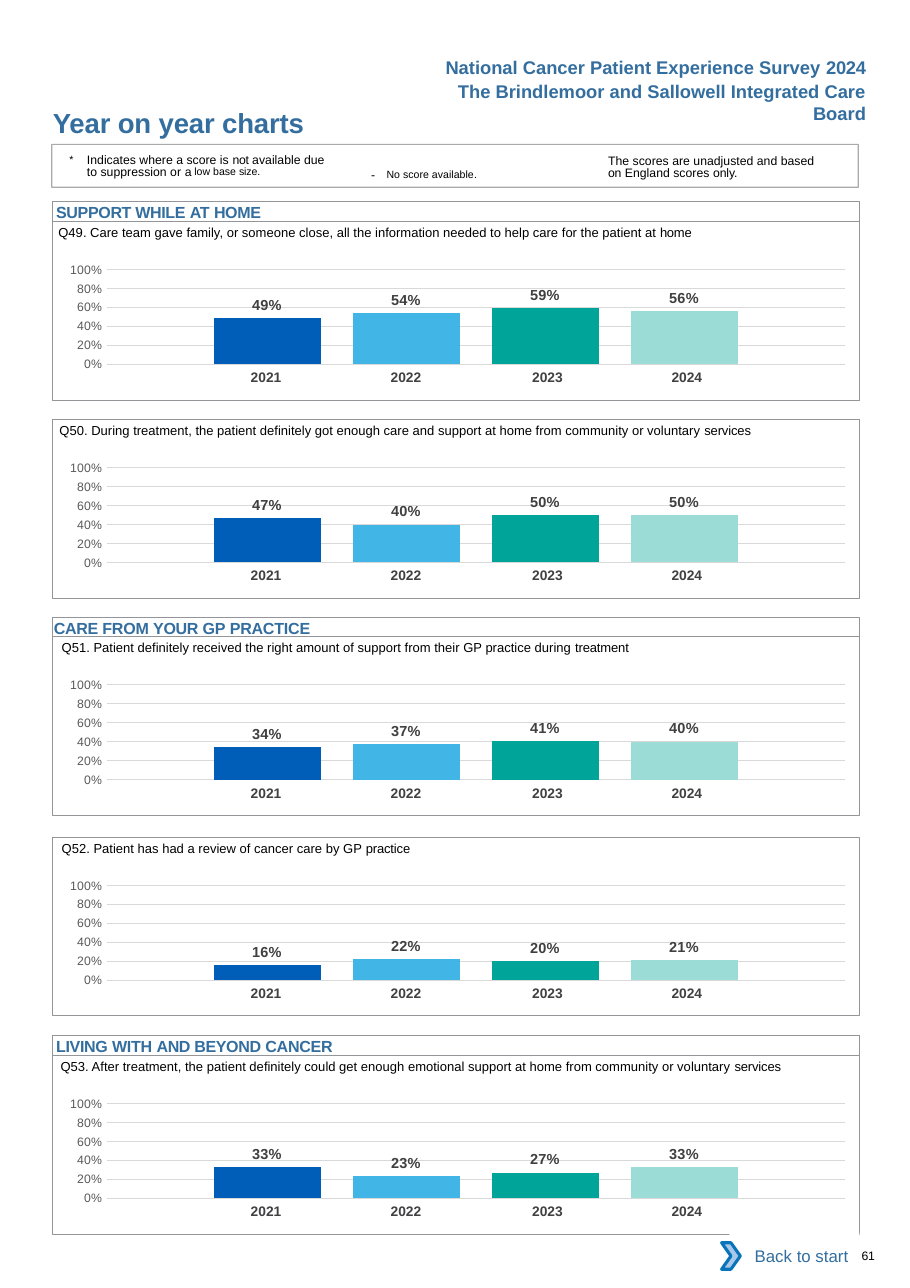
from dataclasses import dataclass
from typing import NamedTuple

from lxml import etree
from pptx import Presentation
from pptx import util as u
from pptx.chart import data as cd
from pptx.dml import color as dml
from pptx.enum import chart as ec, shapes, text
from pptx.oxml import ns

PX = 9144  # 100 px to the inch
COLORS = {
    "heading": "336E9F", "body": "000000", "frame": "939598", "year": "414042",
    "axis": "595959", "grid": "D9D9D9", "label": "404040", "white": "FFFFFF",
    "arrow": "A8C7E9", "arrow_line": "0A74BB",
}
YEAR_COLORS = {"2021": "005EB8", "2022": "41B6E6", "2023": "00A499", "2024": "9CDCD7"}
YEAR_WIDTHS = (127, 127, 134, 127)
YEAR_RIGHT_MARGINS = (0, 0, 4, 12)
PLOT_AREA = {"x": 0.079, "y": 0.145, "w": 0.915, "h": 0.666}
NO_GRID_STYLE = "{2D5ABB26-0587-4C30-8999-92F81FD0307C}"
FRAME_X, FRAME_W, FRAME_H = 48, 732, 162


class Box(NamedTuple):
    x: int
    y: int
    w: int
    h: int


class Run(NamedTuple):
    text: str
    spacing: float = 0
    size: float | None = None
    baseline: int = 0


@dataclass(frozen=True)
class Style:
    size: float
    color: str = "body"
    bold: bool = False
    align: text.PP_ALIGN = text.PP_ALIGN.LEFT
    anchor: text.MSO_ANCHOR = text.MSO_ANCHOR.TOP
    insets: tuple[int, int, int, int] = (0, 0, 0, 0)
    before: float = 0
    line: float | None = None
    left: int = 0
    hanging: int = 0
    wrap: bool = True


@dataclass(frozen=True)
class Panel:
    y: int
    question_x: int
    question: list[Run]
    values: tuple[float, ...]
    heading: tuple[Run, ...] = ()
    heading_indent: int = 3


USUAL = (10, 5, 10, 5)
TITLE = Style(18, "heading", True, before=4.1, left=1)
BANNER = Style(12, "heading", True, text.PP_ALIGN.RIGHT, insets=USUAL, wrap=False)
QUESTION = Style(8.5, anchor=text.MSO_ANCHOR.MIDDLE, insets=(0, 9, 0, 0), before=6.8, left=1)
NOTE = Style(8, insets=(0, 3, 0, 0), before=2.5, line=8.1)
HANGING_NOTE = Style(8, insets=(0, 3, 0, 0), before=2.5, line=8.1, left=16, hanging=16)
DASH_NOTE = Style(8, insets=USUAL, before=2.1)
PAGE_NUMBER = Style(8, before=0.2, left=10)
BACK = Style(11, "heading", align=text.PP_ALIGN.RIGHT, anchor=text.MSO_ANCHOR.MIDDLE, insets=USUAL)

PANELS = [
    Panel(201, 52, [Run("Q49. Care team gave family, or someone close, all the information needed to help care for the patient at"),
                    Run(" home", -0.2)], (0.49, 0.54, 0.59, 0.56),
          (Run("SUPPORT WHILE ", -0.2), Run("AT ", -0.1), Run("HOME", -0.2))),
    Panel(381, 53, [Run("Q50. During treatment, the patient definitely got enough care and support at home from community or voluntary "),
                    Run("services", -0.1)], (0.47, 0.40, 0.50, 0.50)),
    Panel(578, 55, [Run("Q51. Patient definitely received the right amount of support from their GP practice during "),
                    Run("treatment", -0.1)], (0.34, 0.37, 0.41, 0.40),
          (Run("CARE ", -0.2), Run("FROM ", -0.1), Run("YOUR ", -0.2), Run("GP "), Run("PRACTICE", -0.1)), 1),
    Panel(760, 55, [Run("Q52. Patient has had a review of cancer care by GP "),
                    Run("practice", -0.1)], (0.16, 0.22, 0.20, 0.21)),
    Panel(958, 54, [Run("Q53. After treatment, the patient definitely could get enough emotional support at home from community or voluntary "),
                    Run("services", -0.1)], (0.33, 0.23, 0.27, 0.33),
          (Run("LIVING ", -0.2), Run("WITH ", -0.1), Run("AND BEYOND ", -0.2), Run("CANCER", -0.1))),
]


def emu(box: Box) -> list[int]:
    return [v * PX for v in box]


def rgb(name: str) -> dml.RGBColor:
    return dml.RGBColor.from_string(COLORS.get(name, name))


def set_font(font, size: float, color: str, bold: bool = False) -> None:
    font.name, font.size, font.bold = "Arial", u.Pt(size), bold
    font.color.rgb = rgb(color)


def write(tf, runs, style: Style) -> None:
    tf.word_wrap = style.wrap
    tf.vertical_anchor = style.anchor
    tf.margin_left, tf.margin_top, tf.margin_right, tf.margin_bottom = (v * PX for v in style.insets)
    p = tf.paragraphs[0]
    p.alignment = style.align
    p.space_before = u.Pt(style.before)
    if style.line:
        p.line_spacing = u.Pt(style.line)
    pr = p._p.get_or_add_pPr()
    pr.set("marL", str(style.left * PX))
    pr.set("indent", str(-style.hanging * PX))
    for item in runs:
        r = p.add_run()
        r.text = item.text
        set_font(r.font, item.size or style.size, style.color, style.bold)
        rpr = r._r.get_or_add_rPr()
        rpr.set("spc", str(round(item.spacing * 100)))
        if item.baseline:
            rpr.set("baseline", str(item.baseline * 1000))


def add_text(s, box: Box, runs, style: Style) -> None:
    write(s.shapes.add_textbox(*emu(box)).text_frame, runs, style)


def add_shape(s, box: Box, kind=shapes.MSO_SHAPE.RECTANGLE, fill: str = "", line: str = "", width: float = 0.5):
    sp = s.shapes.add_shape(kind, *emu(box))
    sp.shadow.inherit = False
    if fill:
        sp.fill.solid()
        sp.fill.fore_color.rgb = rgb(fill)
    else:
        sp.fill.background()
    if line:
        sp.line.color.rgb = rgb(line)
        sp.line.width = u.Pt(width)
    else:
        sp.line.fill.background()
    return sp


def add_year_chart(s, box: Box, values: tuple[float, ...]) -> None:
    data = cd.CategoryChartData(number_format="0%")
    data.categories = ["1"]
    for i, value in enumerate(values, 1):
        data.add_series(f"Series {i}", [value])
    chart = s.shapes.add_chart(ec.XL_CHART_TYPE.COLUMN_CLUSTERED, *emu(box), data).chart
    chart.has_legend = chart.has_title = False
    chart.font.name, chart.font.size = "Calibri", u.Pt(10)
    chart.font.color.rgb = rgb("body")
    chart.category_axis.visible = False
    axis = chart.value_axis
    axis.minimum_scale, axis.maximum_scale, axis.major_unit = 0, 1, 0.2
    axis.major_tick_mark = axis.minor_tick_mark = ec.XL_TICK_MARK.NONE
    axis.format.line.fill.background()
    axis.major_gridlines.format.line.color.rgb = rgb("grid")
    axis.major_gridlines.format.line.width = u.Pt(0.75)
    axis.tick_labels.number_format = "0%"
    axis.tick_labels.number_format_is_linked = False
    set_font(axis.tick_labels.font, 8, "axis")
    plot = chart.plots[0]
    plot.gap_width, plot.overlap, plot.vary_by_categories = 200, -30, False
    for series, color in zip(plot.series, YEAR_COLORS.values()):
        series.format.fill.solid()
        series.format.fill.fore_color.rgb = rgb(color)
        labels = series.data_labels
        labels.show_value = True
        labels.position = ec.XL_LABEL_POSITION.OUTSIDE_END
        labels.number_format, labels.number_format_is_linked = "0%", False
        set_font(labels.font, 9.5, "label", True)
    set_plot_area(chart)


def set_plot_area(chart) -> None:
    area = chart.element.find(".//" + ns.qn("c:plotArea"))
    for old in area.findall(ns.qn("c:layout")):
        area.remove(old)
    layout = etree.Element(ns.qn("c:layout"))
    manual = etree.SubElement(layout, ns.qn("c:manualLayout"))
    settings = {"layoutTarget": "inner", "xMode": "edge", "yMode": "edge", **PLOT_AREA}
    for tag, value in settings.items():
        etree.SubElement(manual, ns.qn(f"c:{tag}")).set("val", str(value))
    area.insert(0, layout)


def add_year_table(s, y: int) -> None:
    frame = s.shapes.add_table(1, len(YEAR_COLORS), *emu(Box(173, y, sum(YEAR_WIDTHS), 27)))
    frame.element.find(".//" + ns.qn("a:tableStyleId")).text = NO_GRID_STYLE
    table = frame.table
    table.first_row = table.horz_banding = False
    for i, (year, width, right) in enumerate(zip(YEAR_COLORS, YEAR_WIDTHS, YEAR_RIGHT_MARGINS)):
        table.columns[i].width = width * PX
        cell = table.cell(0, i)
        cell.fill.background()
        cell.margin_left, cell.margin_top, cell.margin_right, cell.margin_bottom = (
            v * PX for v in (10, 5, right, 5))
        p = cell.text_frame.paragraphs[0]
        p.alignment = text.PP_ALIGN.CENTER
        r = p.add_run()
        r.text = year
        set_font(r.font, 9, "year", True)


def add_panel(s, panel: Panel) -> None:
    if panel.heading:
        sp = add_shape(s, Box(FRAME_X, panel.y - 18, FRAME_W, 18), line="frame")
        style = Style(10.5, "heading", True, insets=(0, 1, 0, 0), before=0.5, left=panel.heading_indent)
        write(sp.text_frame, panel.heading, style)
    add_text(s, Box(panel.question_x, panel.y - 7, 721, 24), panel.question, QUESTION)
    add_year_table(s, panel.y + 130)
    add_year_chart(s, Box(39, panel.y + 25, FRAME_W, 129), panel.values)
    add_shape(s, Box(FRAME_X, panel.y, FRAME_W, FRAME_H), line="frame")


def add_notes_band(s) -> None:
    add_text(s, Box(552, 138, 201, 27), [
        Run("The scores are unadjusted and based"), Run(" on", -0.2),
        Run(" England scores "), Run("only.", -0.1)], NOTE)
    add_text(s, Box(327, 141, 183, 24), [
        Run("- ", 2.6), Run("No score available", 0, 12, 3), Run(".", -0.1, 12, 3)], DASH_NOTE)
    add_text(s, Box(63, 138, 237, 27), [
        Run("*\t", 0, 12, 3), Run("Indicates where a score is "), Run("not ", -0.2),
        Run("available due to suppression or "), Run("a ", -0.5),
        Run("low base", 0, 12, 7), Run(" size.", -0.1, 12, 7)], HANGING_NOTE)
    band = add_shape(s, Box(47, 131, FRAME_W, 39), line="frame", width=0.75)
    line_color = band.line._ln.find(".//" + ns.qn("a:srgbClr"))
    etree.SubElement(line_color, ns.qn("a:alpha")).set("val", "80000")


def main() -> None:
    prs = Presentation()
    prs.slide_width, prs.slide_height = 826 * PX, 1169 * PX
    s = prs.slides.add_slide(prs.slide_layouts[6])
    add_text(s, Box(392, 46, 404, 30), [
        Run("National Cancer Patient Experience Survey "), Run("2024", -0.2)], BANNER)
    add_text(s, Box(356, 68, 440, 30), [Run("The Brindlemoor and Sallowell Integrated Care Board")], BANNER)
    add_text(s, Box(47, 96, 450, 30), [Run("Year on year charts", -0.1)], TITLE)
    add_notes_band(s)
    for panel in PANELS:
        add_panel(s, panel)
    back = add_shape(s, Box(662, 1119, 118, 42), fill="white")
    write(back.text_frame, [Run("Back to start")], BACK)
    add_shape(s, Box(655, 1128, 17, 24), shapes.MSO_SHAPE.CHEVRON, "arrow", "arrow_line", 2)
    add_text(s, Box(772, 1133, 51, 13), [Run("61", -0.2)], PAGE_NUMBER)
    prs.save("out.pptx")


if __name__ == "__main__":
    main()
